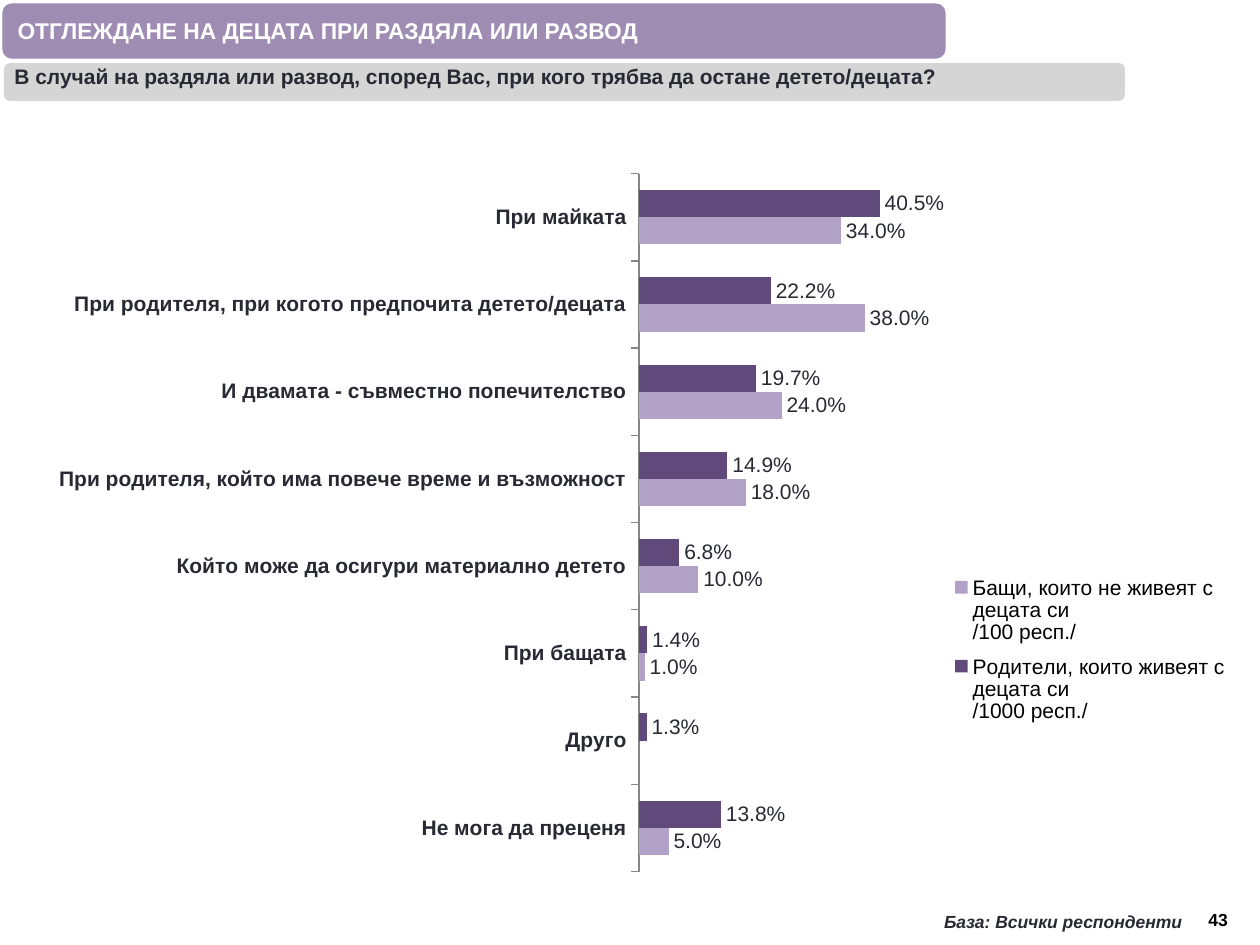
from lxml import etree
from pptx import Presentation
from pptx.chart.data import CategoryChartData
from pptx.dml.color import RGBColor
from pptx.enum.chart import (XL_CHART_TYPE, XL_LABEL_POSITION,
                             XL_LEGEND_POSITION, XL_TICK_MARK)
from pptx.enum.shapes import MSO_SHAPE
from pptx.enum.text import MSO_ANCHOR, MSO_AUTO_SIZE, PP_ALIGN
from pptx.oxml.ns import qn
from pptx.util import Emu, Inches, Pt

INK = RGBColor(0x29, 0x29, 0x34)
BLACK = RGBColor(0, 0, 0)
WHITE = RGBColor(255, 255, 255)
MAUVE = RGBColor(0x9E, 0x8C, 0xB3)
GREY = RGBColor(0xD5, 0xD5, 0xD5)
PLUM = RGBColor(0x60, 0x4A, 0x7B)
LILAC = RGBColor(0xB3, 0xA2, 0xC7)
AXIS = RGBColor(0x86, 0x86, 0x86)

ANSWERS = [
    ("При майката", 0.405, 0.34),
    ("При родителя, при когото предпочита детето/децата", 0.222, 0.38),
    ("И двамата - съвместно попечителство", 0.197, 0.24),
    ("При родителя, който има повече време и възможност", 0.149, 0.18),
    ("Който може да осигури материално детето", 0.068, 0.1),
    ("При бащата", 0.014, 0.01),
    ("Друго", 0.013, None),
    ("Не мога да преценя", 0.138, 0.05),
]
GROUPS = [
    ("Родители, които живеят с децата си\n/1000 респ./", PLUM),
    ("Бащи, които не живеят с децата си \n/100 респ./", LILAC),
]


def px(*sizes):
    return [Emu(round(size * 914400 / 126)) for size in sizes]


def place(parent, index, inner=False, **share):
    """Give a chart part a manual layout, as shares of the chart."""
    old = parent.find(qn("c:layout"))
    if old is not None:
        parent.remove(old)
    layout = etree.Element(qn("c:layout"))
    manual = etree.SubElement(layout, qn("c:manualLayout"))
    rules = {"layoutTarget": "inner"} if inner else {}
    rules |= {"xMode": "edge", "yMode": "edge", **share}
    for tag, val in rules.items():
        etree.SubElement(manual, qn("c:" + tag)).set("val", str(val))
    parent.insert(index, layout)


class Deck:
    font = "Arial"

    def __init__(self):
        self.prs = Presentation()
        self.prs.slide_width, self.prs.slide_height = Inches(10), Inches(7.5)
        self.slide = self.prs.slides.add_slide(self.prs.slide_layouts[5])

    def style(self, font, size, color, bold=False, italic=False):
        font.name, font.size = self.font, Pt(size)
        font.bold, font.italic = bold, italic
        font.color.rgb = color

    def label(self, shape, text, size, color, align=PP_ALIGN.LEFT,
              anchor=MSO_ANCHOR.TOP, wrap=True, italic=False):
        frame = shape.text_frame
        frame.text = text
        frame.word_wrap = wrap
        frame.auto_size = MSO_AUTO_SIZE.NONE
        frame.vertical_anchor = anchor
        para = frame.paragraphs[0]
        para.alignment = align
        for run in para.runs:
            self.style(run.font, size, color, True, italic)

    def title(self, text, box):
        shape = self.slide.shapes.title
        shape.left, shape.top, shape.width, shape.height = px(*box)
        self.label(shape, text, 13, WHITE, anchor=MSO_ANCHOR.MIDDLE)
        # Bring the title in front of its band
        shape._element.getparent().append(shape._element)

    def text(self, text, box, size, color, **look):
        shape = self.slide.shapes.add_textbox(*px(*box))
        self.label(shape, text, size, color, **look)

    def band(self, box, fill, line=None):
        shape = self.slide.shapes.add_shape(
            MSO_SHAPE.FLOWCHART_ALTERNATE_PROCESS, *px(*box))
        shape.shadow.inherit = False
        shape.fill.solid()
        shape.fill.fore_color.rgb = fill
        if line is None:
            shape.line.fill.background()
        else:
            shape.line.color.rgb = line
            shape.line.width = Pt(0.75)

    def bars(self, groups, rows, box):
        names, *columns = zip(*rows)
        data = CategoryChartData(number_format="0.0%")
        data.categories = names
        for (name, _), column in zip(groups, columns):
            data.add_series(name, column)
        chart = self.slide.shapes.add_chart(
            XL_CHART_TYPE.BAR_CLUSTERED, *px(*box), data).chart
        chart.has_title = False
        self.style(chart.font, 12, BLACK)

        plot = chart.plots[0]
        plot.gap_width, plot.overlap = 121, 0
        plot.vary_by_categories = False
        for series, (_, color) in zip(plot.series, groups):
            series.format.fill.solid()
            series.format.fill.fore_color.rgb = color
            labels = series.data_labels
            labels.show_value = True
            labels.number_format = "0.0%"
            labels.number_format_is_linked = False
            labels.position = XL_LABEL_POSITION.OUTSIDE_END
            self.style(labels.font, 12, INK)

        axis = chart.category_axis
        axis.reverse_order = True
        axis.major_tick_mark = XL_TICK_MARK.OUTSIDE
        axis.format.line.color.rgb = AXIS
        self.style(axis.tick_labels.font, 12, INK, True)
        scale = chart.value_axis
        scale.minimum_scale, scale.maximum_scale = 0, 1
        scale.has_major_gridlines = False
        scale.visible = False

        chart.has_legend = True
        legend = chart.legend
        legend.position = XL_LEGEND_POSITION.RIGHT
        legend.include_in_layout = False
        self.style(legend.font, 12, BLACK)
        place(legend._element, 1, x=0.77, y=0.57, w=0.23, h=0.23)
        place(chart._chartSpace.chart.plotArea, 0, inner=True,
              x=0.507, y=0.039, w=0.491, h=0.947)


def main():
    deck = Deck()
    deck.text("43", (1196, 903, 47, 34), 10, BLACK, wrap=False)
    deck.band((3, 4, 942, 54), MAUVE, MAUVE)
    deck.band((4, 63, 1121, 38), GREY)
    deck.bars(GROUPS, ANSWERS, (25, 145, 1211, 737))
    deck.text("В случай на раздяла или развод, според Вас, "
              "при кого трябва да остане детето/децата?",
              (2, 57, 1104, 38), 12, INK)
    deck.title("ОТГЛЕЖДАНЕ НА ДЕЦАТА ПРИ РАЗДЯЛА ИЛИ РАЗВОД",
               (5, 8, 1106, 44))
    deck.text("База: Всички респонденти", (930, 905, 266, 34), 10, INK,
              align=PP_ALIGN.CENTER, wrap=False, italic=True)
    deck.prs.save("out.pptx")


if __name__ == "__main__":
    main()
